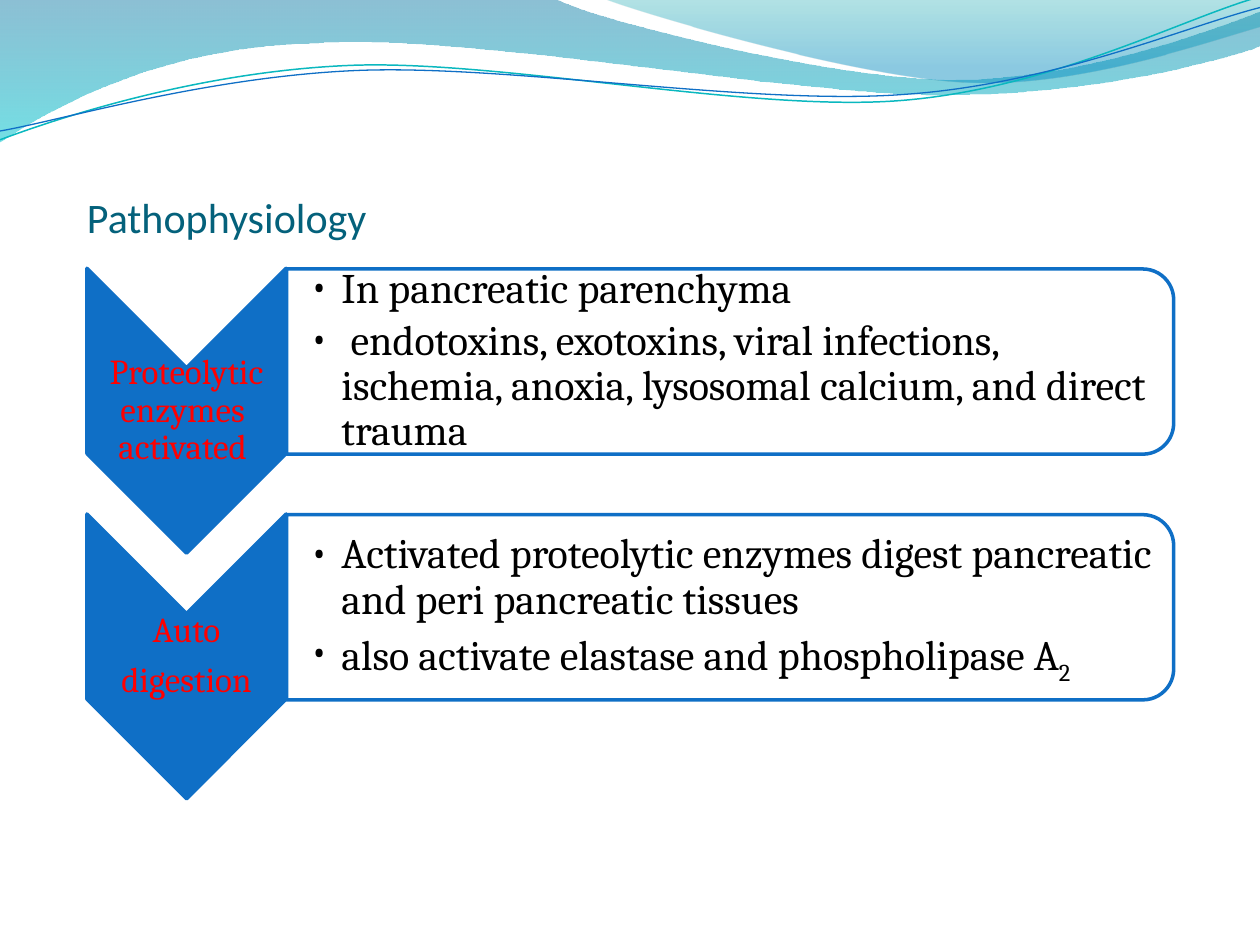
from lxml.etree import SubElement
from pptx import Presentation
from pptx.dml.color import RGBColor
from pptx.enum.shapes import MSO_SHAPE as Shape
from pptx.enum.text import MSO_ANCHOR as Anchor, PP_ALIGN as Align
from pptx.oxml.ns import qn
from pptx.util import Inches, Pt

BLUE = "0F6FC6"
TITLE = {"size": Pt(24), "name": "Calibri", "color": "04617B"}
STAGE = {"size": Pt(20), "name": "Cambria", "color": "FF0000"}
DETAIL = {"size": Pt(24), "name": "Cambria", "color": "000000"}
STAGE_SPACING = {"alignment": Align.CENTER, "line_spacing": 0.9, "space_after": Pt(7)}
DETAIL_SPACING = {"line_spacing": 0.9, "space_after": Pt(3.6)}
STAGE_INSETS = (0.01, 0.01, 0.01, 0.01)
DETAIL_INSETS = (0.19, 0.02, 0.02, 0.02)

BROAD_WAVE = [
    (0, 0), (4.4, -0.01),
    (4.76, 0.17, 6.64, 0.63, 7.58, 0.63), (8.53, 0.63, 9.58, 0.26, 10, 0.09),
    (10.01, 0.36),
    (9.83, 0.44, 8.7, 0.76, 7.46, 0.75), (6.22, 0.75, 3.82, 0.28, 2.57, 0.34),
    (1.29, 0.36, 0.46, 0.83, -0.01, 1.13), (0, 0),
]
RIGHT_WAVE = [
    (4.79, -0.01),
    (5.09, 0.11, 6.82, 0.62, 7.69, 0.65), (8.56, 0.69, 9.61, 0.32, 10, 0.21),
    (10, 0), (4.79, -0.01),
]
TEAL_STRAND = [
    (0, 1.11),
    (0.48, 0.93, 1.58, 0.57, 2.77, 0.52), (3.95, 0.47, 5.93, 0.89, 7.13, 0.8),
    (8.33, 0.71, 9.38, 0.15, 9.98, -0.02),
]
BLUE_STRAND = [
    (0, 1.04),
    (0.47, 0.96, 1.64, 0.61, 2.83, 0.56), (4.03, 0.51, 5.97, 0.84, 7.17, 0.75),
    (8.36, 0.67, 9.41, 0.21, 10, 0.06),
]
STEPS = [
    (["Proteolytic enzymes  activated "],
     ["In pancreatic parenchyma",
      " endotoxins, exotoxins, viral infections, ischemia, anoxia, "
      "lysosomal calcium, and direct trauma"]),
    (["Auto", "digestion"],
     ["Activated proteolytic enzymes digest pancreatic and peri pancreatic tissues",
      ("also activate elastase and phospholipase A", "2")]),
]


def rgb(value):
    return RGBColor.from_string(value)


def set_alpha(element, percent):
    for color in element.iter(qn("a:srgbClr")):
        SubElement(color, qn("a:alpha")).set("val", str(percent * 1000))


class SlideBuilder:
    """Holds the current slide and draws each kind of element in its style."""

    def __init__(self, presentation):
        self.slide = presentation.slides.add_slide(presentation.slide_layouts[6])
        self.shapes = self.slide.shapes

    def curve(self, outline, closed):
        start, *ends = [tuple(map(Inches, segment[-2:])) for segment in outline]
        builder = self.shapes.build_freeform(*start)
        builder.add_line_segments(ends, close=closed)
        curve = builder.convert_to_shape()
        curve.shadow.inherit = False
        straight = list(curve._element.iter(qn("a:lnTo")))
        for line, segment in zip(straight, outline[1:]):
            if len(segment) == 6:
                self.bend(line, segment, curve.left, curve.top)
        return curve

    def bend(self, line, segment, left, top):
        bezier = line.makeelement(qn("a:cubicBezTo"))
        for x, y in zip(segment[::2], segment[1::2]):
            point = SubElement(bezier, qn("a:pt"))
            point.set("x", str(Inches(x) - left))
            point.set("y", str(Inches(y) - top))
        line.getparent().replace(line, bezier)

    def wave(self, outline, stops):
        wave = self.curve(outline, True)
        wave.line.fill.background()
        wave.fill.gradient()
        wave.fill.gradient_angle = 270
        for stop, (position, color, alpha) in zip(wave.fill.gradient_stops, stops):
            stop.position = position
            stop.color.rgb = rgb(color)
            set_alpha(stop._gs, alpha)

    def strand(self, outline, color, width):
        strand = self.curve(outline, False)
        strand.fill.background()
        strand.line.color.rgb = rgb(color)
        strand.line.width = Pt(width)

    def turned(self, kind, box, fill, alpha=100):
        shape = self.shapes.add_shape(kind, *map(Inches, box))
        shape.rotation = 90
        shape.shadow.inherit = False
        shape.fill.solid()
        shape.fill.fore_color.rgb = rgb(fill)
        if alpha < 100:
            set_alpha(shape._element.spPr.find(qn("a:solidFill")), alpha)
        shape.line.color.rgb = rgb(BLUE)
        shape.line.width = Pt(2)

    def text(self, box, paragraphs, font, spacing, insets,
             anchor=Anchor.MIDDLE, bullets=False):
        frame = self.shapes.add_textbox(*map(Inches, box)).text_frame
        frame.word_wrap = True
        frame.vertical_anchor = anchor
        for side, inset in zip(("left", "top", "right", "bottom"), insets):
            setattr(frame, f"margin_{side}", Inches(inset))
        for index, content in enumerate(paragraphs):
            paragraph = frame.add_paragraph() if index else frame.paragraphs[0]
            if bullets:
                self.bullet(paragraph, font["name"])
            for name, value in spacing.items():
                setattr(paragraph, name, value)
            parts = (content,) if isinstance(content, str) else content
            for order, part in enumerate(parts):
                run = paragraph.add_run()
                run.text = part
                for name, value in font.items():
                    if name == "color":
                        run.font.color.rgb = rgb(value)
                    else:
                        setattr(run.font, name, value)
                if order:
                    run._r.get_or_add_rPr().set("baseline", "-25000")

    def bullet(self, paragraph, typeface):
        properties = paragraph._p.get_or_add_pPr()
        properties.set("marL", str(Inches(0.25)))
        properties.set("indent", str(Inches(-0.25)))
        SubElement(properties, qn("a:buFont")).set("typeface", typeface)
        SubElement(properties, qn("a:buChar")).set("char", "•")


def main():
    presentation = Presentation()
    presentation.slide_width, presentation.slide_height = Inches(10), Inches(7.5)
    builder = SlideBuilder(presentation)

    builder.wave(BROAD_WAVE, [(0, "0074A1", 45), (1, "00C6CF", 55)])
    builder.wave(RIGHT_WAVE, [(0, "00A1A9", 30), (0.8, "008BBF", 45)])
    builder.strand(TEAL_STRAND, "0AB8BF", 0.85)
    builder.strand(BLUE_STRAND, BLUE, 0.75)
    builder.text((0.69, 1.24, 8.62, 0.68), ["Pathophysiology"], TITLE, {},
                 (0, 0.05, 0, 0), Anchor.BOTTOM)

    for index, (stage, details) in enumerate(STEPS):
        drop = 1.95 * index
        builder.turned(Shape.CHEVRON, (0.35, 2.47 + drop, 2.26, 1.58), BLUE)
        builder.text((0.69, 2.92 + drop, 1.58, 0.68), stage,
                     STAGE, STAGE_SPACING, STAGE_INSETS)
        builder.turned(Shape.ROUND_2_SAME_RECTANGLE,
                       (5.06, -0.65 + drop, 1.47, 7.04), "FFFFFF", 90)
        builder.text((2.27, 2.2 + drop, 6.97, 1.33), details,
                     DETAIL, DETAIL_SPACING, DETAIL_INSETS, bullets=True)

    presentation.save("out.pptx")


if __name__ == "__main__":
    main()
